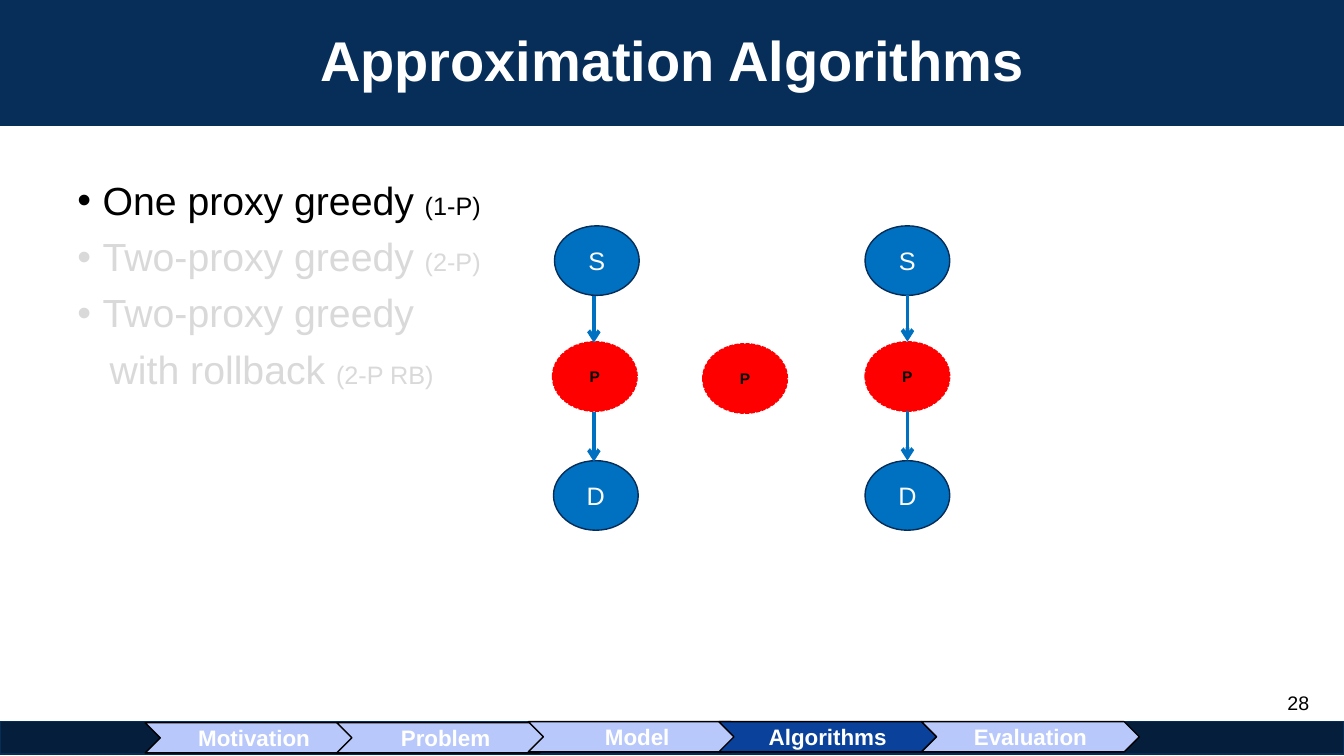
from dataclasses import dataclass

from lxml import etree
from pptx import Presentation
from pptx import util as u
from pptx.dml.color import RGBColor
from pptx.enum import dml, shapes, text
from pptx.oxml import ns

FONT = "Arial"
WHITE = RGBColor(0xFF, 0xFF, 0xFF)
BLACK = RGBColor(0x00, 0x00, 0x00)
FADED = RGBColor(0xD9, 0xD9, 0xD9)
TITLE_NAVY = RGBColor(0x06, 0x2E, 0x59)
OUTLINE_NAVY = RGBColor(0x06, 0x2D, 0x58)
FOOTER_NAVY = RGBColor(0x04, 0x1E, 0x3C)
NODE_BLUE = RGBColor(0x00, 0x70, 0xC0)
PROXY_RED = RGBColor(0xFF, 0x00, 0x00)
STEP_LILAC = RGBColor(0xB8, 0xC8, 0xFA)
STEP_ACTIVE = RGBColor(0x0A, 0x41, 0x9A)

NODE_W, NODE_H = 0.84, 0.69
STEP_W, STEP_H = 2.16, 0.3


@dataclass
class Style:
    size: float
    color: RGBColor
    bold: bool = False


@dataclass
class Item:
    words: str
    tag: str
    color: RGBColor
    bulleted: bool = True


@dataclass
class Node:
    label: str
    left: float
    top: float


@dataclass
class Arrow:
    x: float
    start: float
    end: float


@dataclass
class Step:
    label: str
    left: float
    top: float
    active: bool = False


def add_run(paragraph, words: str, style: Style) -> None:
    run = paragraph.add_run()
    run.text = words
    run.font.name = FONT
    run.font.size = u.Pt(style.size)
    run.font.bold = style.bold
    run.font.color.rgb = style.color


def add_block(slide, kind, left: float, top: float, width: float, height: float,
              fill: RGBColor, outline: RGBColor | None = None,
              label: str = "", style: Style | None = None):
    block = slide.shapes.add_shape(kind, u.Inches(left), u.Inches(top),
                                   u.Inches(width), u.Inches(height))
    block.shadow.inherit = False
    block.fill.solid()
    block.fill.fore_color.rgb = fill
    if outline is None:
        block.line.fill.background()
    else:
        block.line.color.rgb = outline
        block.line.width = u.Pt(1)
    if label:
        frame = block.text_frame
        frame.word_wrap = False
        frame.margin_left = frame.margin_right = 0
        frame.margin_top = frame.margin_bottom = 0
        frame.vertical_anchor = text.MSO_ANCHOR.MIDDLE
        frame.paragraphs[0].alignment = text.PP_ALIGN.CENTER
        add_run(frame.paragraphs[0], label, style)
    return block


def add_text_box(slide, left: float, top: float, width: float, height: float):
    box = slide.shapes.add_textbox(u.Inches(left), u.Inches(top),
                                   u.Inches(width), u.Inches(height))
    box.text_frame.word_wrap = True
    return box.text_frame


def add_item(paragraph, item: Item) -> None:
    paragraph.line_spacing = 0.9
    paragraph.space_before = u.Pt(10)
    props = paragraph._p.get_or_add_pPr()
    if item.bulleted:
        props.set("marL", str(u.Inches(0.25)))
        props.set("indent", str(-u.Inches(0.25)))
        etree.SubElement(props, ns.qn("a:buFont")).set("typeface", FONT)
        etree.SubElement(props, ns.qn("a:buChar")).set("char", "•")
    else:
        props.set("marL", str(u.Inches(0.32)))
    add_run(paragraph, item.words, Style(28, item.color))
    if item.tag:
        add_run(paragraph, item.tag, Style(18, item.color))


def add_node(slide, node: Node) -> None:
    is_proxy = node.label == "P"
    oval = add_block(slide, shapes.MSO_SHAPE.OVAL, node.left, node.top, NODE_W, NODE_H,
                     PROXY_RED if is_proxy else NODE_BLUE,
                     PROXY_RED if is_proxy else OUTLINE_NAVY, node.label,
                     Style(11, BLACK, True) if is_proxy else Style(18, WHITE))
    if is_proxy:
        oval.line.dash_style = dml.MSO_LINE.SQUARE_DOT


def add_arrow(slide, arrow: Arrow) -> None:
    link = slide.shapes.add_connector(
        shapes.MSO_CONNECTOR.STRAIGHT, u.Inches(arrow.x), u.Inches(arrow.start),
        u.Inches(arrow.x), u.Inches(arrow.end))
    link.line.color.rgb = NODE_BLUE
    link.line.width = u.Pt(2.75)
    etree.SubElement(link.line._get_or_add_ln(), ns.qn("a:tailEnd")).set("type", "arrow")
    etree.SubElement(link._element.spPr, ns.qn("a:effectLst"))


ITEMS = [
    Item("One proxy greedy ", "(1-P)", BLACK),
    Item("Two-proxy greedy ", "(2-P)", FADED),
    Item("Two-proxy greedy", "", FADED),
    Item("with rollback ", "(2-P RB)", FADED, bulleted=False),
]
NODES = [
    Node("S", 5.5, 2.24), Node("P", 5.48, 3.39), Node("D", 5.49, 4.57),
    Node("P", 6.97, 3.41),
    Node("S", 8.58, 2.24), Node("P", 8.58, 3.39), Node("D", 8.58, 4.57),
]
ARROWS = [
    Arrow(5.89, 2.94, 3.4), Arrow(5.89, 4.09, 4.58),
    Arrow(9, 2.93, 3.39), Arrow(9, 4.08, 4.57),
]
STEPS = [
    Step("Motivation", 1.44, 7.17),
    Step("Problem", 3.34, 7.17),
    Step("Model", 5.24, 7.16),
    Step("Algorithms", 7.13, 7.16, active=True),
    Step("Evaluation", 9.14, 7.16),
]


def main() -> None:
    deck = Presentation()
    deck.slide_width, deck.slide_height = u.Inches(13.33), u.Inches(7.5)
    slide = deck.slides.add_slide(deck.slide_layouts[6])

    # Title band and page number
    title = add_block(slide, shapes.MSO_SHAPE.RECTANGLE, 0, 0, 13.33, 1.25, TITLE_NAVY,
                      label="Approximation Algorithms", style=Style(40, WHITE, True))
    title.text_frame.paragraphs[0].line_spacing = 0.9
    page_number = add_text_box(slide, 12.67, 6.81, 0.67, 0.52)
    add_run(page_number.paragraphs[0], "28", Style(14, BLACK))

    # List of algorithms
    algorithms = add_text_box(slide, 0.67, 1.75, 12, 4.95)
    for index, item in enumerate(ITEMS):
        add_item(algorithms.add_paragraph() if index else algorithms.paragraphs[0], item)

    # Source, proxy and destination paths
    for node in NODES:
        add_node(slide, node)
    for arrow in ARROWS:
        add_arrow(slide, arrow)

    # Progress bar
    add_block(slide, shapes.MSO_SHAPE.RECTANGLE, 0, 7.16, 13.33, 0.32,
              FOOTER_NAVY, OUTLINE_NAVY)
    for step in STEPS:
        add_block(slide, shapes.MSO_SHAPE.CHEVRON, step.left, step.top, STEP_W, STEP_H,
                  STEP_ACTIVE if step.active else STEP_LILAC, BLACK,
                  step.label, Style(16, WHITE, True))

    deck.save("out.pptx")


if __name__ == "__main__":
    main()
